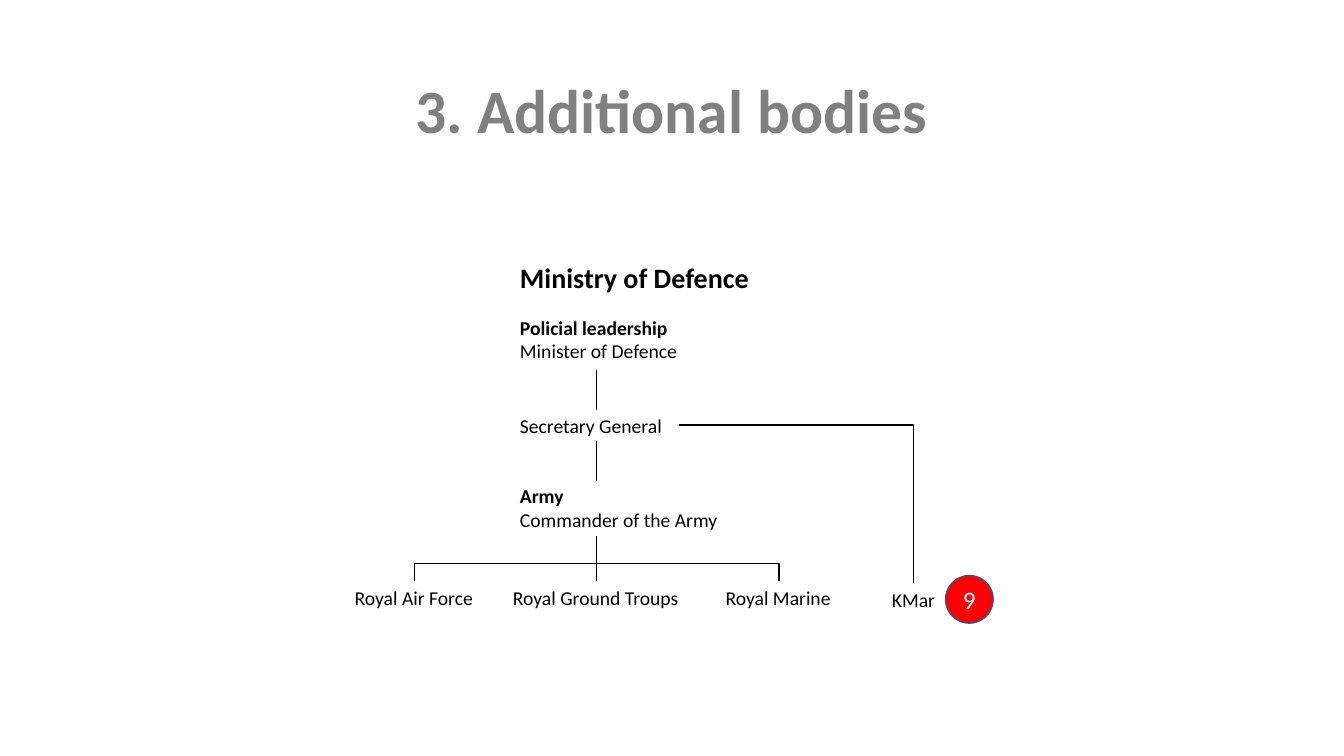
from dataclasses import dataclass

from lxml import etree
from pptx import Presentation
from pptx import util as u
from pptx.dml.color import RGBColor
from pptx.enum import shapes, text
from pptx.oxml import ns
from pptx.slide import Slide
from pptx.text.text import TextFrame


@dataclass(frozen=True)
class Theme:
    font: str = "Calibri"
    ink: str = "000000"
    title: str = "808080"
    badge: str = "FF0000"
    badge_line: str = "325491"
    badge_text: str = "FFFFFF"
    title_size: int = 44
    heading_size: int = 20
    badge_size: int = 18
    body_size: int = 14


THEME = Theme()


@dataclass(frozen=True)
class Label:
    left: float
    top: float
    width: float
    height: float
    lines: str
    size: int = THEME.body_size
    bold_first: bool = False
    wrap: bool = False


@dataclass(frozen=True)
class Link:
    x1: float
    y1: float
    x2: float
    y2: float


# Shared positions of the chart
TRUNK = 426.25
CHAIN_LEFT = 364.3
ONE_LINE = 24.25
TWO_LINES = 41.2
BRANCH_TOP = 402.5
UNIT_TOP = 414.9

LABELS = [
    Label(CHAIN_LEFT, 182.2, 304.6, 31.5, "Ministry of Defence",
          THEME.heading_size, bold_first=True, wrap=True),
    Label(CHAIN_LEFT, 221.8, 131, TWO_LINES,
          "Policial leadership\nMinister of Defence", bold_first=True),
    Label(CHAIN_LEFT, 291.8, 120.2, ONE_LINE, "Secretary General"),
    Label(CHAIN_LEFT, 342.3, 162.7, TWO_LINES,
          "Army\nCommander of the Army", bold_first=True, wrap=True),
    Label(246.2, UNIT_TOP, 100.1, ONE_LINE, "Royal Air Force"),
    Label(359.3, UNIT_TOP, 133.9, ONE_LINE, "Royal Ground Troups"),
    Label(511.2, UNIT_TOP, 90.7, ONE_LINE, "Royal Marine"),
    Label(630, 416.4, 45.4, ONE_LINE, "KMar"),
]

# Straight links run down the trunk; elbows go sideways, then down
LINKS = [
    Link(TRUNK, 264.4, TRUNK, 292.8),
    Link(TRUNK, 315, TRUNK, 343.4),
    Link(TRUNK, 383, TRUNK, UNIT_TOP),
    Link(TRUNK, BRANCH_TOP, 296.2, UNIT_TOP),
    Link(TRUNK, BRANCH_TOP, 556.5, UNIT_TOP),
    Link(484.8, 303.6, 652.5, 416.2),
]


def write(frame: TextFrame, lines: str, size: int, color: str,
          bold_first: bool = False) -> None:
    frame.text = lines
    for index, para in enumerate(frame.paragraphs):
        for span in para.runs:
            span.font.name = THEME.font
            span.font.size = u.Pt(size)
            span.font.bold = bold_first and index == 0
            span.font.color.rgb = RGBColor.from_string(color)


def center(frame: TextFrame) -> None:
    frame.vertical_anchor = text.MSO_ANCHOR.MIDDLE
    frame.paragraphs[0].alignment = text.PP_ALIGN.CENTER


def add_title(page: Slide) -> None:
    box = page.shapes.add_textbox(u.Pt(66), u.Pt(28.8), u.Pt(828), u.Pt(104.4))
    frame = box.text_frame
    frame.word_wrap = True
    write(frame, "3. Additional bodies", THEME.title_size, THEME.title, True)
    center(frame)
    frame.paragraphs[0].line_spacing = 0.9


def add_label(page: Slide, label: Label) -> None:
    box = page.shapes.add_textbox(u.Pt(label.left), u.Pt(label.top),
                                  u.Pt(label.width), u.Pt(label.height))
    frame = box.text_frame
    frame.word_wrap = label.wrap
    frame.auto_size = text.MSO_AUTO_SIZE.SHAPE_TO_FIT_TEXT
    write(frame, label.lines, label.size, THEME.ink, label.bold_first)


def add_link(page: Slide, link: Link) -> None:
    straight = link.x1 == link.x2
    kind = shapes.MSO_CONNECTOR.STRAIGHT if straight else shapes.MSO_CONNECTOR.ELBOW
    line = page.shapes.add_connector(kind, u.Pt(link.x1), u.Pt(link.y1),
                                     u.Pt(link.x2), u.Pt(link.y2))
    line.line.color.rgb = RGBColor.from_string(THEME.ink)
    line.line.width = u.Pt(1)
    properties = line._element.spPr
    if not straight:
        # A single corner instead of the default two
        properties.find(ns.qn("a:prstGeom")).set("prst", "bentConnector2")
    etree.SubElement(properties, ns.qn("a:effectLst"))


def add_badge(page: Slide) -> None:
    badge = page.shapes.add_shape(shapes.MSO_SHAPE.OVAL, u.Pt(675.4), u.Pt(411.1),
                                  u.Pt(34), u.Pt(34))
    badge.shadow.inherit = False
    badge.fill.solid()
    badge.fill.fore_color.rgb = RGBColor.from_string(THEME.badge)
    badge.line.color.rgb = RGBColor.from_string(THEME.badge_line)
    badge.line.width = u.Pt(1)
    write(badge.text_frame, "9", THEME.badge_size, THEME.badge_text)
    center(badge.text_frame)


def main() -> None:
    deck = Presentation()
    deck.slide_width, deck.slide_height = u.Pt(960), u.Pt(540)
    page = deck.slides.add_slide(deck.slide_layouts[6])

    # Title
    add_title(page)

    # Organisation chart
    for link in LINKS:
        add_link(page, link)
    for label in LABELS:
        add_label(page, label)

    # Number beside the last body
    add_badge(page)

    deck.save("out.pptx")


if __name__ == "__main__":
    main()
